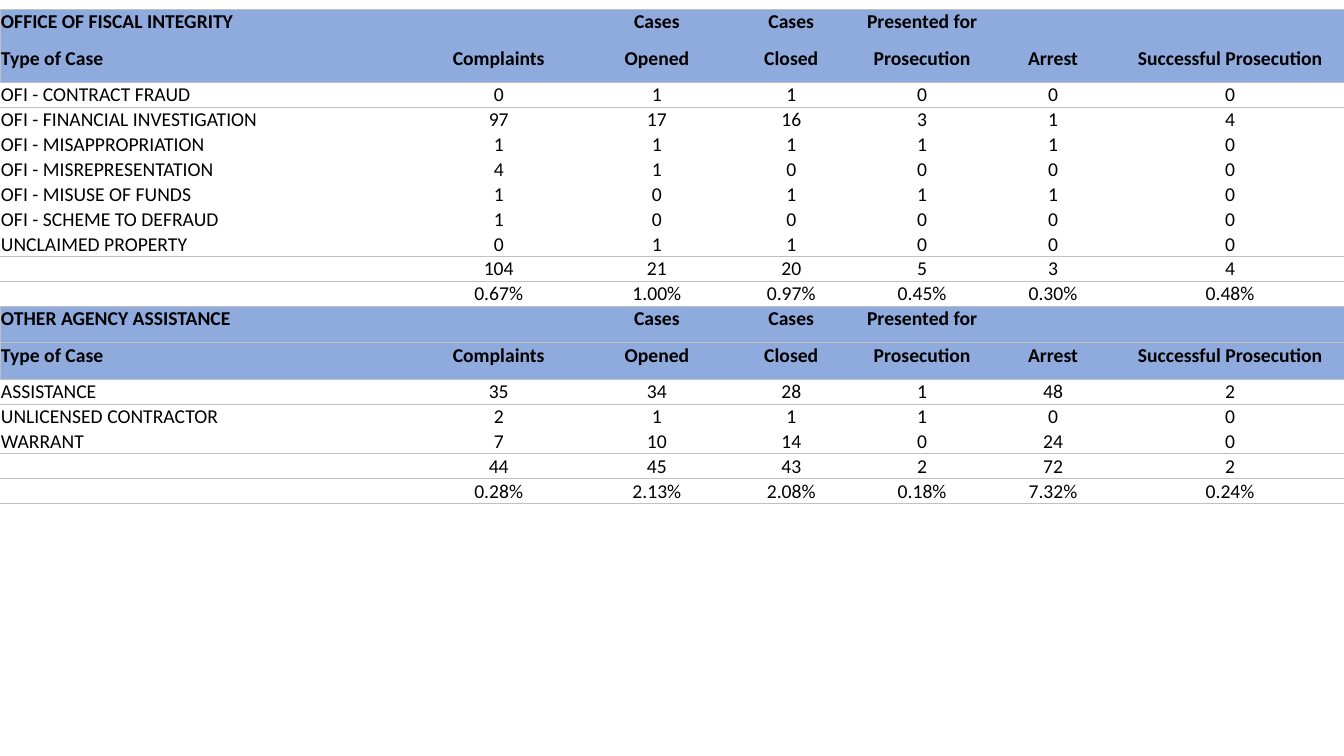
import dataclasses

import pptx
import pptx.dml.color
import pptx.enum.text
import pptx.oxml.ns
import pptx.util
from lxml import etree

Pt = pptx.util.Pt
qn = pptx.oxml.ns.qn


@dataclasses.dataclass(frozen=True)
class Theme:
    font: str = "Calibri"
    size: float = 14
    text: str = "000000"
    header_fill: str = "8FAADC"
    rule: str = "C0C0C0"
    rule_width: float = 0.5
    inset: float = 0.72
    header_row: float = 26.1
    body_row: float = 17.4
    plain_table: str = "{2D5ABB26-0587-4C30-8999-92F81FD0307C}"


THEME = Theme()

COLUMN_WIDTHS = [294, 124.5, 101.5, 90.5, 96.5, 90.5, 162.5]
HEADING_TOP = ["", "Cases", "Cases", "Presented for", "", ""]
HEADING_BOTTOM = ["Type of Case", "Complaints", "Opened", "Closed",
                  "Prosecution", "Arrest", "Successful Prosecution"]

# Each section: title, case rows, total rows
SECTIONS = [
    ("OFFICE OF FISCAL INTEGRITY",
     [["OFI - CONTRACT FRAUD", 0, 1, 1, 0, 0, 0],
      ["OFI - FINANCIAL INVESTIGATION", 97, 17, 16, 3, 1, 4],
      ["OFI - MISAPPROPRIATION", 1, 1, 1, 1, 1, 0],
      ["OFI - MISREPRESENTATION", 4, 1, 0, 0, 0, 0],
      ["OFI - MISUSE OF FUNDS", 1, 0, 1, 1, 1, 0],
      ["OFI - SCHEME TO DEFRAUD", 1, 0, 0, 0, 0, 0],
      ["UNCLAIMED PROPERTY", 0, 1, 1, 0, 0, 0]],
     [["", 104, 21, 20, 5, 3, 4],
      ["", "0.67%", "1.00%", "0.97%", "0.45%", "0.30%", "0.48%"]]),
    ("OTHER AGENCY ASSISTANCE",
     [["ASSISTANCE", 35, 34, 28, 1, 48, 2],
      ["UNLICENSED CONTRACTOR", 2, 1, 1, 1, 0, 0],
      ["WARRANT", 7, 10, 14, 0, 24, 0]],
     [["", 44, 45, 43, 2, 72, 2],
      ["", "0.28%", "2.13%", "2.08%", "0.18%", "7.32%", "0.24%"]]),
]


def section_rows(sections):
    """Yield (values, is_header, ruled sides) for every table row."""
    for title, cases, totals in sections:
        heading = [[title, *HEADING_TOP], HEADING_BOTTOM]
        for block in (heading, cases, totals):
            for index, values in enumerate(block):
                sides = "T" if index == 0 else ""
                sides += "B" if index == len(block) - 1 else ""
                yield values, block is heading, sides


def rule_cell(cell, sides):
    """Draw thin rules on the given sides, in schema order before the fill."""
    properties = cell._tc.get_or_add_tcPr()
    ordered = [side for side in "LRTB" if side in sides]
    for position, side in enumerate(ordered):
        line = etree.Element(qn(f"a:ln{side}"), w=str(Pt(THEME.rule_width)))
        fill = etree.SubElement(line, qn("a:solidFill"))
        etree.SubElement(fill, qn("a:srgbClr"), val=THEME.rule)
        properties.insert(position, line)


def fill_cell(cell, value, is_header, centred):
    cell.margin_left = cell.margin_right = cell.margin_top = Pt(THEME.inset)
    cell.margin_bottom = 0
    if is_header:
        cell.fill.solid()
        cell.fill.fore_color.rgb = pptx.dml.color.RGBColor.from_string(THEME.header_fill)
    else:
        cell.fill.background()

    cell.text_frame.text = str(value)
    paragraph = cell.text_frame.paragraphs[0]
    if centred:
        paragraph.alignment = pptx.enum.text.PP_ALIGN.CENTER
    for run in paragraph.runs:
        run.font.name = THEME.font
        run.font.size = Pt(THEME.size)
        run.font.bold = is_header
        run.font.color.rgb = pptx.dml.color.RGBColor.from_string(THEME.text)
    # Empty cells need a text size too, or they stretch their row
    if not paragraph.runs:
        etree.SubElement(paragraph._p, qn("a:endParaRPr"), sz=str(round(THEME.size * 100)))


def add_case_table(slide, left, top, width):
    rows = list(section_rows(SECTIONS))
    heights = [THEME.header_row if is_header else THEME.body_row
               for _, is_header, _ in rows]
    frame = slide.shapes.add_table(len(rows), len(COLUMN_WIDTHS), Pt(left), Pt(top),
                                   Pt(width), Pt(sum(heights)))
    cases = frame.table
    cases.first_row = cases.horz_banding = False
    cases._tbl.tblPr.find(qn("a:tableStyleId")).text = THEME.plain_table

    # Column widths share out the given width
    scale = width / sum(COLUMN_WIDTHS)
    for column, share in zip(cases.columns, COLUMN_WIDTHS):
        column.width = Pt(share * scale)

    # Cells, with outer side rules on the headings only
    last = len(COLUMN_WIDTHS) - 1
    for row_index, (values, is_header, sides) in enumerate(rows):
        cases.rows[row_index].height = Pt(heights[row_index])
        for column_index, value in enumerate(values):
            cell = cases.cell(row_index, column_index)
            fill_cell(cell, value, is_header, column_index > 0)
            outer = {0: "L", last: "R"}.get(column_index, "") if is_header else ""
            rule_cell(cell, sides + outer)


def main():
    deck = pptx.Presentation()
    deck.slide_width, deck.slide_height = Pt(960), Pt(540)
    slide = deck.slides.add_slide(deck.slide_layouts[6])
    add_case_table(slide, left=0, top=6.5, width=960)
    deck.save("out.pptx")


if __name__ == "__main__":
    main()
